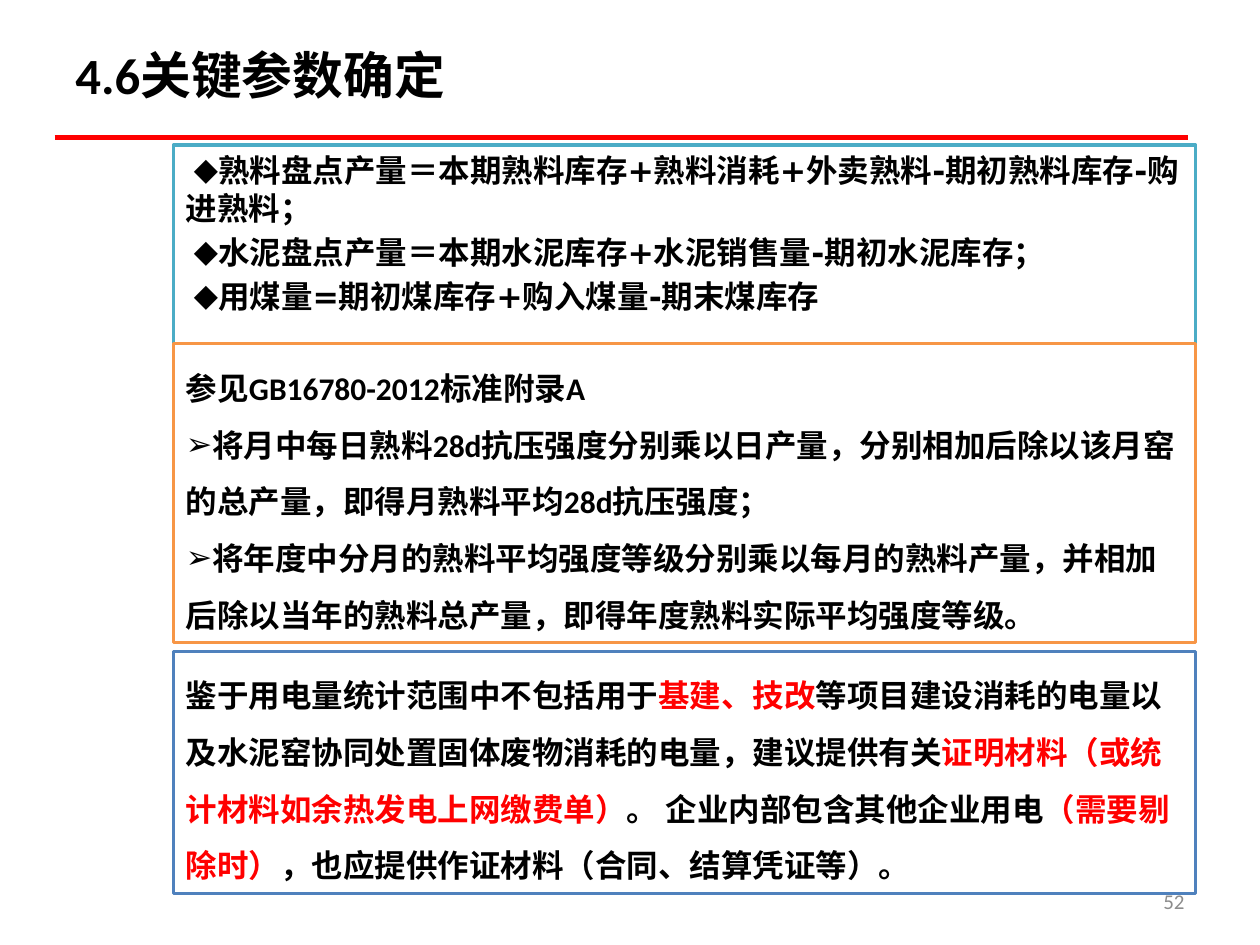
from dataclasses import dataclass

from lxml import etree
from pptx import Presentation
from pptx.dml.color import RGBColor
from pptx.enum.lang import MSO_LANGUAGE_ID
from pptx.enum.shapes import MSO_CONNECTOR, MSO_SHAPE
from pptx.enum.text import MSO_ANCHOR, PP_ALIGN
from pptx.oxml.ns import qn
from pptx.util import Cm, Pt

CHINESE = MSO_LANGUAGE_ID.SIMPLIFIED_CHINESE
STRAIGHT = MSO_CONNECTOR.STRAIGHT
RECTANGLE = MSO_SHAPE.RECTANGLE
TOP, MIDDLE = MSO_ANCHOR.TOP, MSO_ANCHOR.MIDDLE
LEFT, RIGHT = PP_ALIGN.LEFT, PP_ALIGN.RIGHT


@dataclass(frozen=True)
class Theme:
    text: str = "000000"
    accent: str = "FF0000"
    muted: str = "8C8C8C"
    panel: str = "FFFFFF"
    teal: str = "4BACC6"
    orange: str = "F79646"
    blue: str = "4F81BD"
    latin: str = "Calibri"
    symbol: str = "DejaVu Sans"
    title_size: float = 29
    body_size: float = 18
    number_size: float = 12
    rule_width: float = 2.5
    border_width: float = 2


THEME = Theme()
TITLE = "4.6关键参数确定"
PAGE_NUMBER = "52"
PANEL_LEFT, PANEL_WIDTH = 3.5, 20.6

PANELS = [
    {
        "top": 2.92, "height": 4.95, "border": THEME.teal, "font": THEME.symbol,
        "line_spacing": 1, "space_before": 3.6, "indent": 0.16,
        "paragraphs": [
            ("◆", [("熟料盘点产量＝本期熟料库存+熟料消耗+外卖熟料-期初熟料库存-购进熟料；", THEME.text)]),
            ("◆", [("水泥盘点产量＝本期水泥库存+水泥销售量-期初水泥库存；", THEME.text)]),
            ("◆", [("用煤量=期初煤库存+购入煤量-期末煤库存", THEME.text)]),
        ],
    },
    {
        "top": 6.93, "height": 6.02, "border": THEME.orange, "font": THEME.latin,
        "line_spacing": 1.5, "space_before": 0, "indent": 0,
        "paragraphs": [
            (None, [("参见GB16780-2012标准附录A", THEME.text)]),
            ("➢", [("将月中每日熟料28d抗压强度分别乘以日产量，分别相加后除以该月窑的总产量，"
                    "即得月熟料平均28d抗压强度；", THEME.text)]),
            ("➢", [("将年度中分月的熟料平均强度等级分别乘以每月的熟料产量，并相加后除以"
                    "当年的熟料总产量，即得年度熟料实际平均强度等级。", THEME.text)]),
        ],
    },
    {
        "top": 13.13, "height": 4.88, "border": THEME.blue, "font": THEME.latin,
        "line_spacing": 1.5, "space_before": 3.6, "indent": 0,
        "paragraphs": [
            (None, [
                ("鉴于用电量统计范围中不包括用于", THEME.text),
                ("基建、技改", THEME.accent),
                ("等项目建设消耗的电量以及水泥窑协同处置固体废物消耗的电量，建议提供有关", THEME.text),
                ("证明材料（或统计材料如余热发电上网缴费单）", THEME.accent),
                ("。 企业内部包含其他企业用电", THEME.text),
                ("（需要剔除时）", THEME.accent),
                ("，也应提供作证材料（合同、结算凭证等）。", THEME.text),
            ]),
        ],
    },
]


def add_run(paragraph, text, size, color, font=THEME.latin, bold=True):
    run = paragraph.add_run()
    run.text = text
    run.font.name = font
    run.font.size = Pt(size)
    run.font.bold = bold
    run.font.color.rgb = RGBColor.from_string(color)
    run.font.language_id = CHINESE


def add_bullet(paragraph, character, indent):
    properties = paragraph._p.get_or_add_pPr()
    properties.set("marL", "0")
    properties.set("indent", str(Cm(indent)))
    etree.SubElement(properties, qn("a:buFont")).set("typeface", THEME.symbol)
    etree.SubElement(properties, qn("a:buChar")).set("char", character)


def add_label(slide, box, anchor, alignment):
    text_frame = slide.shapes.add_textbox(*map(Cm, box)).text_frame
    text_frame.word_wrap = True
    text_frame.vertical_anchor = anchor
    paragraph = text_frame.paragraphs[0]
    paragraph.alignment = alignment
    return paragraph


def add_rule(slide):
    rule = slide.shapes.add_connector(STRAIGHT, Cm(1.1), Cm(2.77), Cm(23.95), Cm(2.77))
    rule.line.color.rgb = RGBColor.from_string(THEME.accent)
    rule.line.width = Pt(THEME.rule_width)
    etree.SubElement(rule._element.spPr, qn("a:effectLst"))


def add_panel(slide, panel):
    box = (PANEL_LEFT, panel["top"], PANEL_WIDTH, panel["height"])
    shape = slide.shapes.add_shape(RECTANGLE, *map(Cm, box))
    shape.shadow.inherit = False
    shape.fill.solid()
    shape.fill.fore_color.rgb = RGBColor.from_string(THEME.panel)
    shape.line.color.rgb = RGBColor.from_string(panel["border"])
    shape.line.width = Pt(THEME.border_width)
    text_frame = shape.text_frame
    text_frame.word_wrap = True
    text_frame.vertical_anchor = TOP
    for index, (bullet, runs) in enumerate(panel["paragraphs"]):
        paragraph = text_frame.add_paragraph() if index else text_frame.paragraphs[0]
        paragraph.alignment = LEFT
        paragraph.line_spacing = float(panel["line_spacing"])
        paragraph.space_before = Pt(panel["space_before"])
        if bullet:
            add_bullet(paragraph, bullet, panel["indent"])
        for text, color in runs:
            add_run(paragraph, text, THEME.body_size, color, panel["font"])


def main():
    presentation = Presentation()
    presentation.slide_width, presentation.slide_height = Cm(25.4), Cm(19.05)
    slide = presentation.slides.add_slide(presentation.slide_layouts[6])
    number = add_label(slide, (18.2, 17.65, 5.93, 1.02), MIDDLE, RIGHT)
    add_run(number, PAGE_NUMBER, THEME.number_size, THEME.muted, bold=False)
    add_rule(slide)
    for panel in PANELS:
        add_panel(slide, panel)
    title = add_label(slide, (1.27, 0.76, 22.86, 3.18), TOP, LEFT)
    add_run(title, TITLE, THEME.title_size, THEME.text)
    presentation.save("out.pptx")


if __name__ == "__main__":
    main()
